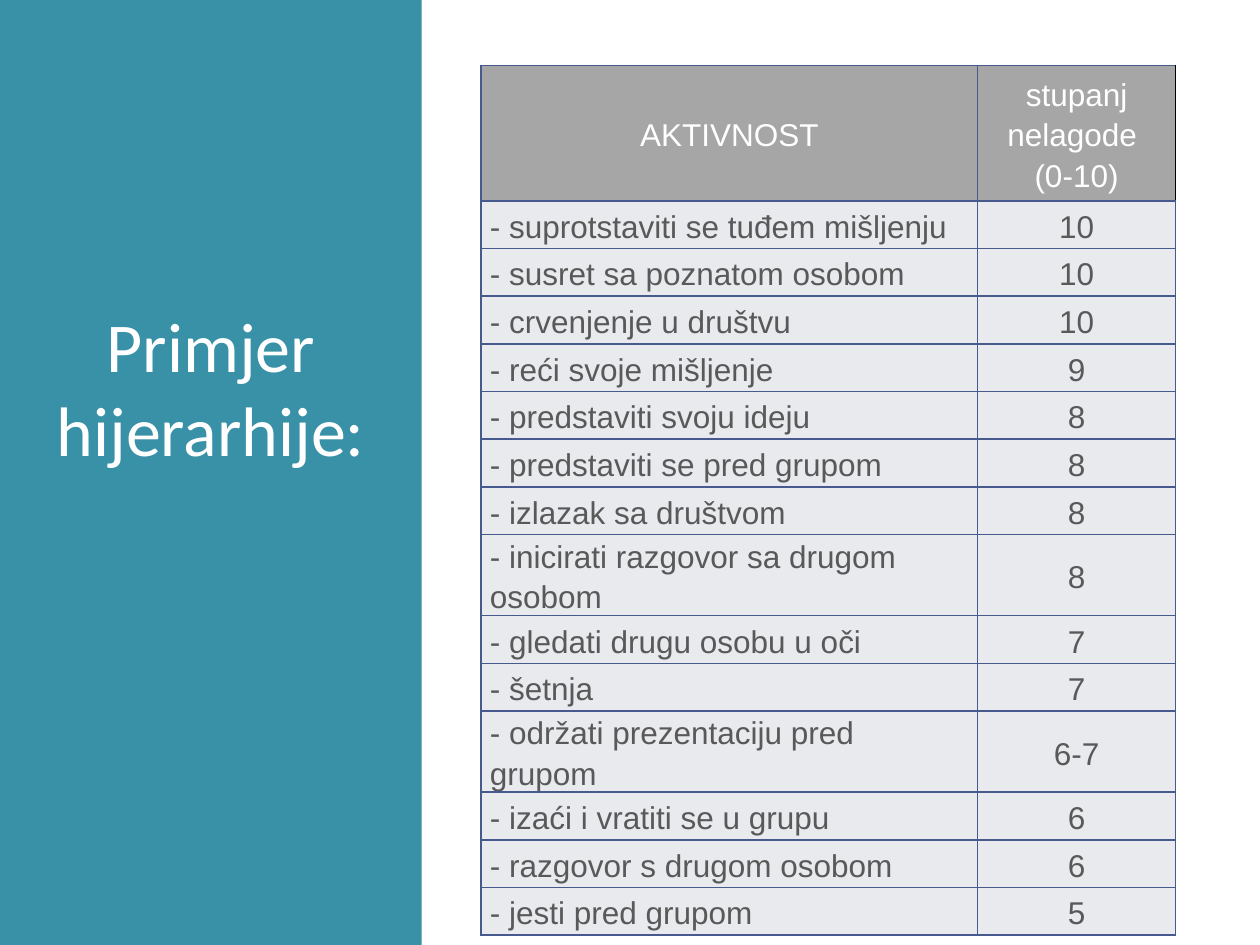
from lxml.etree import SubElement
from pptx import Presentation
from pptx.dml.color import RGBColor
from pptx.enum.shapes import MSO_SHAPE as Shape
from pptx.enum.text import MSO_ANCHOR as Anchor, PP_ALIGN as Align
from pptx.oxml.ns import qn
from pptx.util import Pt

WHITE, TEAL, NAVY, BLACK = "FFFFFF", "3891A7", "475A8D", "000000"
HEADER_GREY, ROW_GREY, TEXT_GREY = "A6A6A6", "E9EAEE", "595959"

HEADINGS = [["AKTIVNOST"], ["stupanj nelagode ", "(0-10)"]]
ACTIVITIES = [
    ("suprotstaviti se tuđem mišljenju", "10"),
    ("susret sa poznatom osobom", "10"),
    ("crvenjenje u društvu", "10"),
    ("reći svoje mišljenje", "9"),
    ("predstaviti svoju ideju", "8"),
    ("predstaviti se pred grupom", "8"),
    ("izlazak sa društvom", "8"),
    ("inicirati razgovor sa drugom osobom", "8"),
    ("gledati drugu osobu u oči", "7"),
    ("šetnja", "7"),
    ("održati prezentaciju pred grupom", "6-7"),
    ("izaći i vratiti se u grupu", "6"),
    ("razgovor s drugom osobom", "6"),
    ("jesti pred grupom", "5"),
]


def paint(color_format, color):
    color_format.rgb = RGBColor.from_string(color)


def fill_with(fill, color):
    fill.solid()
    paint(fill.fore_color, color)


def write(frame, lines, font, size, color, align, spacing=None):
    for index, line in enumerate(lines):
        paragraph = frame.paragraphs[0] if index == 0 else frame.add_paragraph()
        paragraph.alignment = align
        paragraph.line_spacing = spacing
        run = paragraph.add_run()
        run.text = line
        run.font.name, run.font.size = font, Pt(size)
        paint(run.font.color, color)


def add_borders(cell, right):
    properties = cell._tc.get_or_add_tcPr()
    sides = {"a:lnL": NAVY, "a:lnR": right, "a:lnT": NAVY, "a:lnB": NAVY}
    for tag, color in sides.items():
        border = SubElement(properties, qn(tag), w=str(Pt(1)))
        SubElement(SubElement(border, qn("a:solidFill")), qn("a:srgbClr"), val=color)


def fill_cell(cell, lines, background, color, align, right=NAVY):
    cell.margin_left = cell.margin_right = Pt(5)
    cell.margin_top = cell.margin_bottom = 0
    cell.vertical_anchor = Anchor.MIDDLE
    write(cell.text_frame, lines, "Arial", 18, color, align, 1.15)
    add_borders(cell, right)
    fill_with(cell.fill, background)


def add_title_panel(slide):
    panel = slide.shapes.add_shape(Shape.RECTANGLE, 0, 0, Pt(241), Pt(540))
    panel.shadow.inherit = False
    fill_with(panel.fill, TEAL)
    panel.line.fill.background()
    frame = panel.text_frame
    frame.word_wrap = True
    frame.vertical_anchor = Anchor.MIDDLE
    frame.margin_bottom = Pt(102)  # lifts the title above the middle
    write(frame, ["Primjer hijerarhije:"], "Calibri", 40, WHITE, Align.CENTER)


def add_hierarchy_table(slide):
    widths = [283.7, 113]
    heights = [77.4] + [27.25] * len(ACTIVITIES)
    table = slide.shapes.add_table(
        len(heights), len(widths), Pt(275), Pt(37.4), Pt(sum(widths)), Pt(sum(heights))
    ).table
    for column, width in zip(table.columns, widths):
        column.width = Pt(width)
    for row, height in zip(table.rows, heights):
        row.height = Pt(height)

    # Header row
    for column, (lines, right) in enumerate(zip(HEADINGS, (NAVY, BLACK))):
        fill_cell(table.cell(0, column), lines, HEADER_GREY, WHITE, Align.CENTER, right)

    # Activities and their degree of discomfort
    for row, (activity, degree) in enumerate(ACTIVITIES, 1):
        fill_cell(table.cell(row, 0), [f"- {activity}"], ROW_GREY, TEXT_GREY, Align.LEFT)
        fill_cell(table.cell(row, 1), [degree], ROW_GREY, TEXT_GREY, Align.CENTER)


def main():
    deck = Presentation()
    deck.slide_width, deck.slide_height = Pt(720), Pt(540)
    slide = deck.slides.add_slide(deck.slide_layouts[6])
    add_title_panel(slide)
    add_hierarchy_table(slide)
    deck.save("out.pptx")


if __name__ == "__main__":
    main()
